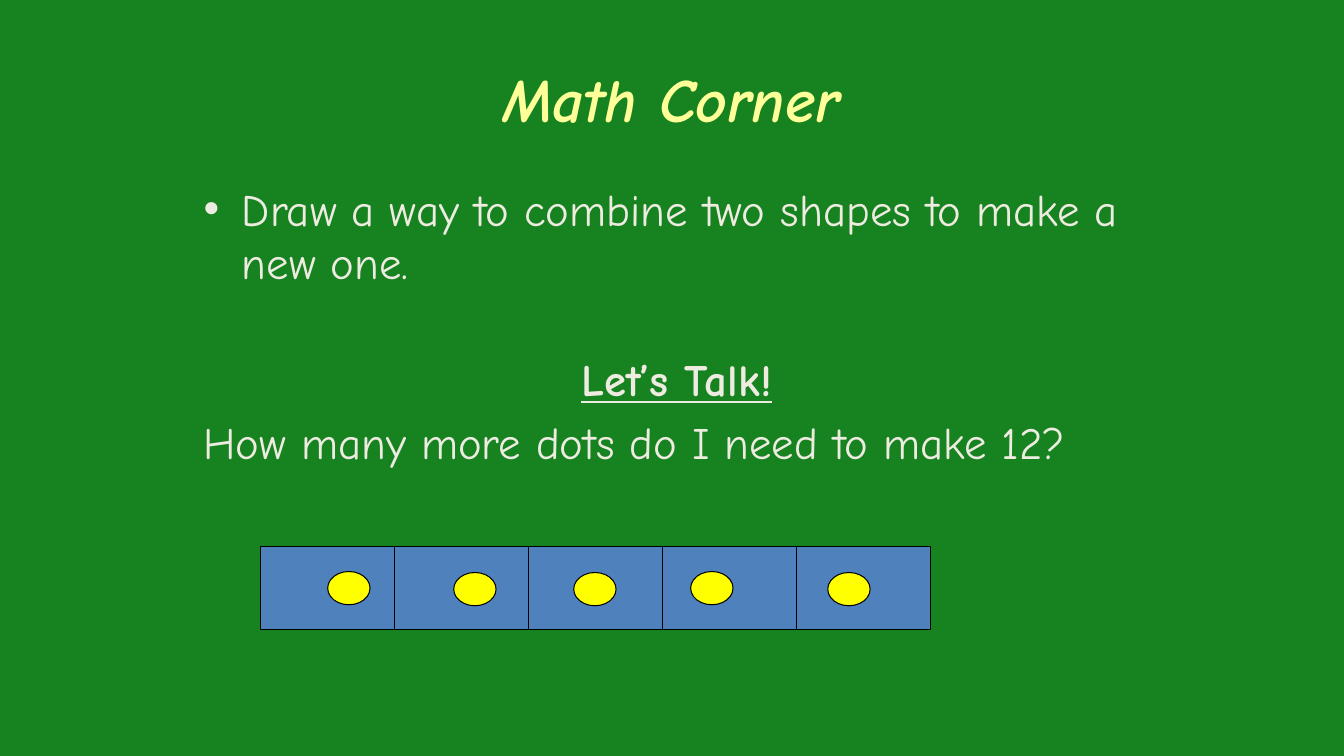
import lxml.etree
import pptx
import pptx.dml.color
import pptx.enum.shapes
import pptx.enum.text
import pptx.oxml.ns
import pptx.util

Inches = pptx.util.Inches
Pt = pptx.util.Pt
SHAPES = pptx.enum.shapes.MSO_SHAPE
ALIGN = pptx.enum.text.PP_ALIGN
ANCHOR = pptx.enum.text.MSO_ANCHOR
COLORS = {
    "board": "168220",
    "title": "FFFF99",
    "text": "EEECE1",
    "cell": "4F81BD",
    "dot": "FFFF00",
    "outline": "000000",
}
FONT = "Comic Neue"


def rgb(name):
    """Return the named colour."""
    return pptx.dml.color.RGBColor.from_string(COLORS[name])


def add_text_frame(slide, left, top, width, height):
    """Add a wrapping text box and return its text frame."""
    box = slide.shapes.add_textbox(Inches(left), Inches(top), Inches(width), Inches(height))
    box.text_frame.word_wrap = True
    return box.text_frame


def style(paragraph, size, color, bold=False, italic=False, underline=False):
    """Set the font of a paragraph."""
    font = paragraph.font
    font.name, font.size = FONT, Pt(size)
    font.bold, font.italic, font.underline = bold, italic, underline
    font.color.rgb = rgb(color)


def add_bullet(paragraph, indent):
    """Give a paragraph a round bullet with a hanging indent."""
    properties = paragraph._p.get_or_add_pPr()
    properties.set("marL", str(Inches(indent)))
    properties.set("indent", str(-Inches(indent)))
    for tag, attribute, value in (("a:buFont", "typeface", "Arial"), ("a:buChar", "char", "•")):
        element = lxml.etree.SubElement(properties, pptx.oxml.ns.qn(tag))
        element.set(attribute, value)


def add_title(slide, left, top, width, height):
    """Place the centred slide title."""
    frame = add_text_frame(slide, left, top, width, height)
    frame.vertical_anchor = ANCHOR.MIDDLE
    paragraph = frame.paragraphs[0]
    paragraph.text = "Math Corner"
    paragraph.alignment = ALIGN.CENTER
    style(paragraph, 44, "title", bold=True, italic=True)


def add_prompts(slide, left, top, width, height):
    """Place the drawing task, the talk heading and its question."""
    frame = add_text_frame(slide, left, top, width, height)
    task = frame.paragraphs[0]
    task.text = "Draw a way to combine two shapes to make a new one."
    add_bullet(task, 0.38)
    style(task, 32, "text")

    heading = frame.add_paragraph()
    heading.text = "Let’s Talk!"
    heading.alignment = ALIGN.CENTER
    heading.space_before = Pt(45)
    style(heading, 32, "text", bold=True, underline=True)

    question = frame.add_paragraph()
    question.text = "How many more dots do I need to make 12?"
    question.space_before = Pt(6.4)
    style(question, 32, "text")


def add_outlined(slide, kind, color, left, top, width, height):
    """Add a filled shape with a thin dark outline."""
    shape = slide.shapes.add_shape(kind, Inches(left), Inches(top), Inches(width), Inches(height))
    shape.shadow.inherit = False
    shape.fill.solid()
    shape.fill.fore_color.rgb = rgb(color)
    shape.line.color.rgb = rgb("outline")
    shape.line.width = Pt(0.75)


def add_dot_strip(slide, left, top, width, height):
    """Place a row of equal cells with one dot in each."""
    dot_offsets = [(0.67, 0.25), (1.92, 0.26), (3.11, 0.26), (4.27, 0.25), (5.63, 0.26)]
    cell_width = width / len(dot_offsets)
    for index in range(len(dot_offsets)):
        add_outlined(slide, SHAPES.RECTANGLE, "cell",
                     left + index * cell_width, top, cell_width, height)
    for across, down in dot_offsets:
        add_outlined(slide, SHAPES.OVAL, "dot", left + across, top + down, 0.42, 0.33)


def main():
    """Build and save the slide."""
    presentation = pptx.Presentation()
    presentation.slide_width, presentation.slide_height = Inches(13.33), Inches(7.5)
    slide = presentation.slides.add_slide(presentation.slide_layouts[6])
    slide.background.fill.solid()
    slide.background.fill.fore_color.rgb = rgb("board")
    add_title(slide, 1, 0.17, 11.33, 1.61)
    add_prompts(slide, 1.92, 1.75, 9.58, 4.95)
    add_dot_strip(slide, 2.58, 5.42, 6.65, 0.83)
    presentation.save("out.pptx")


if __name__ == "__main__":
    main()
